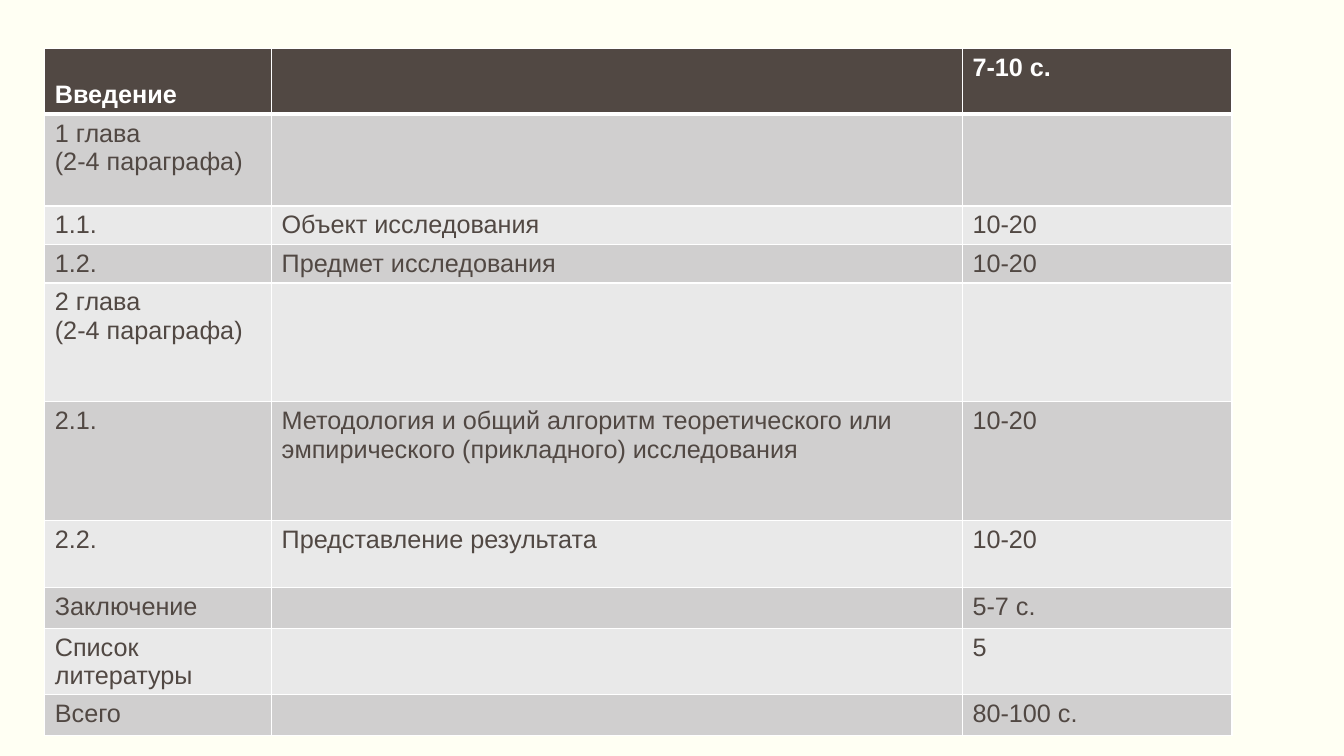
from typing import NamedTuple

from lxml import etree
from pptx import Presentation
from pptx.dml.color import RGBColor
from pptx.enum.text import MSO_ANCHOR
from pptx.oxml.ns import qn
from pptx.util import Pt

TOP, BOTTOM = MSO_ANCHOR.TOP, MSO_ANCHOR.BOTTOM
BLANK_LAYOUT = 6
CREAM, WHITE, BROWN = "FFFFF3", "FFFFFF", "514843"
BANDS = ("E9E9E9", "D0CFCF")
COLUMN_WIDTHS = (162, 493.5, 192.5)


class Section(NamedTuple):
    height: float
    name: str
    content: str
    pages: str


SECTIONS = (
    Section(46.8, "Введение", "", "7-10 с."),
    Section(65.5, "1 глава\n(2-4 параграфа)", "", ""),
    Section(27.5, "1.1.", "Объект исследования", "10-20"),
    Section(27.5, "1.2.", "Предмет исследования", "10-20"),
    Section(85, "2 глава\n(2-4 параграфа)", "", ""),
    Section(85, "2.1.", "Методология и общий алгоритм теоретического или "
            "эмпирического (прикладного) исследования", "10-20"),
    Section(47.5, "2.2.", "Представление результата", "10-20"),
    Section(27.5, "Заключение", "", "5-7 с."),
    Section(47.2, "Список литературы", "", "5"),
    Section(27.5, "Всего", "", "80-100 с."),
)


def rgb(value: str) -> RGBColor:
    return RGBColor.from_string(value)


def write(tf, text: str, *, size: float = 18, color: str = BROWN,
          bold: bool = False) -> None:
    tf.text = text
    for p in tf.paragraphs:
        p.font.size = Pt(size)
        for r in p.runs:
            r.font.name = "Arial"
            r.font.size = Pt(size)
            r.font.bold = bold
            r.font.color.rgb = rgb(color)


def set_borders(cell, *, top: float = 1, bottom: float = 1) -> None:
    """Draw white cell borders; must run before the cell gets its fill."""
    tc_pr = cell._tc.get_or_add_tcPr()
    for side, width in (("L", 1), ("R", 1), ("T", top), ("B", bottom)):
        ln = etree.SubElement(tc_pr, qn(f"a:ln{side}"), w=str(Pt(width)))
        fill = etree.SubElement(ln, qn("a:solidFill"))
        etree.SubElement(fill, qn("a:srgbClr"), val=WHITE)


def add_section(table, row: int, section: Section) -> None:
    header = row == 0
    table.rows[row].height = Pt(section.height)
    for col, text in enumerate(section[1:]):
        cell = table.cell(row, col)
        set_borders(cell, top=3 if row == 1 else 1, bottom=3 if header else 1)
        cell.fill.solid()
        cell.fill.fore_color.rgb = rgb(BROWN if header else BANDS[row % 2])
        cell.vertical_anchor = BOTTOM if header and col == 0 else TOP
        write(cell.text_frame, text, color=WHITE if header else BROWN,
              bold=header)


def main() -> None:
    prs = Presentation()
    prs.slide_width, prs.slide_height = Pt(960), Pt(540)
    s = prs.slides.add_slide(prs.slide_layouts[BLANK_LAYOUT])
    s.background.fill.solid()
    s.background.fill.fore_color.rgb = rgb(CREAM)

    table = s.shapes.add_table(
        len(SECTIONS), len(COLUMN_WIDTHS), Pt(32), Pt(34.8),
        Pt(sum(COLUMN_WIDTHS)), Pt(sum(sec.height for sec in SECTIONS))).table
    for column, width in zip(table.columns, COLUMN_WIDTHS):
        column.width = Pt(width)
    for row, section in enumerate(SECTIONS):
        add_section(table, row, section)
    prs.save("out.pptx")


if __name__ == "__main__":
    main()
